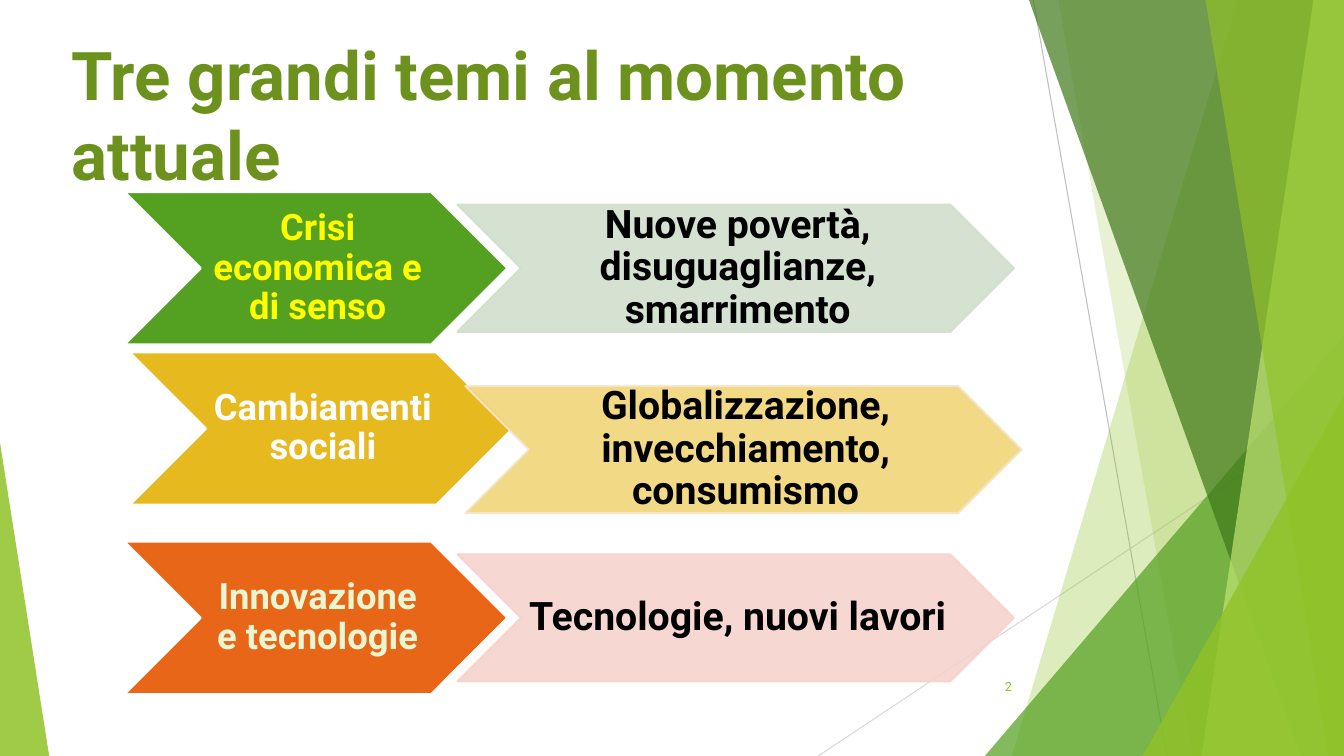
from lxml.etree import SubElement
from pptx import Presentation
from pptx.dml.color import RGBColor
from pptx.enum.shapes import MSO_CONNECTOR, MSO_SHAPE
from pptx.enum.text import MSO_ANCHOR, PP_ALIGN
from pptx.oxml.ns import qn
from pptx.util import Cm, Pt

WIDE, HIGH = 33.87, 19.05
COLORS = {
    "lime": "90C226", "green": "54A021", "dark": "3F7819", "pale": "C0E474",
    "title": "6C921D", "white": "FFFFFF", "black": "000000",
    "yellow": "FFFF00", "cream": "EAF6D1", "gray": "BFBFBF", "silver": "D9D9D9",
    "gold": "E6B91E", "orange": "E76618", "mint": "D1DFCD",
    "sand": "F0D578", "beige": "F5E6CD", "rose": "F6D3CC",
}


def paint(shape, fill, alpha=100, edge=None, width=0):
    """Set fill and outline, with the same opacity in percent for both."""
    shape.shadow.inherit = False
    shape.fill.solid()
    shape.fill.fore_color.rgb = RGBColor.from_string(COLORS[fill])
    if edge:
        shape.line.color.rgb = RGBColor.from_string(COLORS[edge])
        shape.line.width = Pt(width)
    else:
        shape.line.fill.background()
    if alpha < 100:
        for color in shape._element.spPr.iter(qn("a:srgbClr")):
            SubElement(color, qn("a:alpha")).set("val", str(alpha * 1000))


def write(shape, text, size, color, align, anchor, bold=True):
    frame = shape.text_frame
    frame.text = text
    frame.word_wrap = True
    frame.vertical_anchor = anchor
    line = frame.paragraphs[0]
    line.alignment = align
    font = line.runs[0].font
    font.name = "Roboto"
    font.size = Pt(size)
    font.bold = bold
    font.color.rgb = RGBColor.from_string(COLORS[color])
    return frame


deck = Presentation()
deck.slide_width, deck.slide_height = Cm(WIDE), Cm(HIGH)
shapes = deck.slides.add_slide(deck.slide_layouts[6]).shapes

# Thin lines behind the green bands
for x1, y1, x2, y2, color in [
    (26.04, 0, 29.41, HIGH, "gray"),
    (WIDE, 10.24, 20.62, HIGH, "silver"),
]:
    rule = shapes.add_connector(MSO_CONNECTOR.STRAIGHT, Cm(x1), Cm(y1), Cm(x2), Cm(y2))
    rule.line.color.rgb = RGBColor.from_string(COLORS[color])
    rule.line.width = Pt(0.75)
    SubElement(rule._element.spPr, qn("a:effectLst"))

# Bands: top and bottom x of the left edge; they all end at the right edge.
# Corners: left, top, width and tip position; they all stand on the bottom edge.
for kind, place, color, alpha in [
    ("band", (31.19, 25.5), "lime", 30),
    ("band", (26.67, 30.05), "lime", 20),
    ("corner", (24.82, 8.46, 9.05, 1), "green", 72),
    ("band", (25.93, 32.79), "dark", 70),
    ("band", (33.1, 30.28), "pale", 70),
    ("band", (30.38, 33.48), "lime", 65),
    ("corner", (28.8, 9.98, 5.07, 1), "lime", 80),
    ("corner", (0, 11.15, 1.24, 0), "lime", 85),
]:
    if kind == "band":
        top, base = place
        path = shapes.build_freeform(Cm(top), 0)
        path.add_line_segments(
            [(Cm(WIDE), 0), (Cm(WIDE), Cm(HIGH)), (Cm(base), Cm(HIGH))])
        shape = path.convert_to_shape()
    else:
        left, top, width, tip = place
        shape = shapes.add_shape(MSO_SHAPE.ISOSCELES_TRIANGLE, Cm(left), Cm(top),
                                 Cm(width), Cm(HIGH - top))
        shape.adjustments[0] = tip
    paint(shape, color, alpha)

title = shapes.add_textbox(Cm(1.55), Cm(0.71), Cm(24.2), Cm(3))
write(title, "Tre grandi temi al momento attuale", 48, "title",
      PP_ALIGN.LEFT, MSO_ANCHOR.TOP)

# Each theme is a strong chevron followed by a pale one
THEMES = [
    (("Crisi economica e di senso", 3.12, 4.83, "green", "yellow"),
     ("Nuove povertà, disuguaglianze, smarrimento", 11.53, 5.16, "mint", "mint")),
    (("Cambiamenti sociali", 3.25, 8.87, "gold", "white"),
     ("Globalizzazione, invecchiamento, consumismo", 11.73, 9.73, "sand", "beige")),
    (("Innovazione e tecnologie", 3.12, 13.64, "orange", "cream"),
     ("Tecnologie, nuovi lavori", 11.53, 13.97, "rose", "rose")),
]
for theme, detail in THEMES:
    text, left, top, fill, ink = theme
    head = shapes.add_shape(MSO_SHAPE.CHEVRON, Cm(left), Cm(top), Cm(9.68), Cm(3.86))
    paint(head, fill, 100, "white", 2)
    frames = [write(head, text, 26, ink, PP_ALIGN.CENTER, MSO_ANCHOR.MIDDLE)]

    text, left, top, fill, edge = detail
    tail = shapes.add_shape(MSO_SHAPE.CHEVRON, Cm(left), Cm(top), Cm(14.02), Cm(3.2))
    paint(tail, fill, 90, edge, 1.5)
    frames.append(write(tail, text, 28, "black", PP_ALIGN.CENTER, MSO_ANCHOR.MIDDLE))

    for frame in frames:
        frame.margin_left, frame.margin_right = Cm(0.1), 0
        frame.margin_top = frame.margin_bottom = Cm(0.05)
        frame.paragraphs[0].line_spacing = 0.9

number = shapes.add_textbox(Cm(23.85), Cm(16.79), Cm(1.9), Cm(1.02))
write(number, "2", 9, "lime", PP_ALIGN.RIGHT, MSO_ANCHOR.MIDDLE, False)

deck.save("out.pptx")
